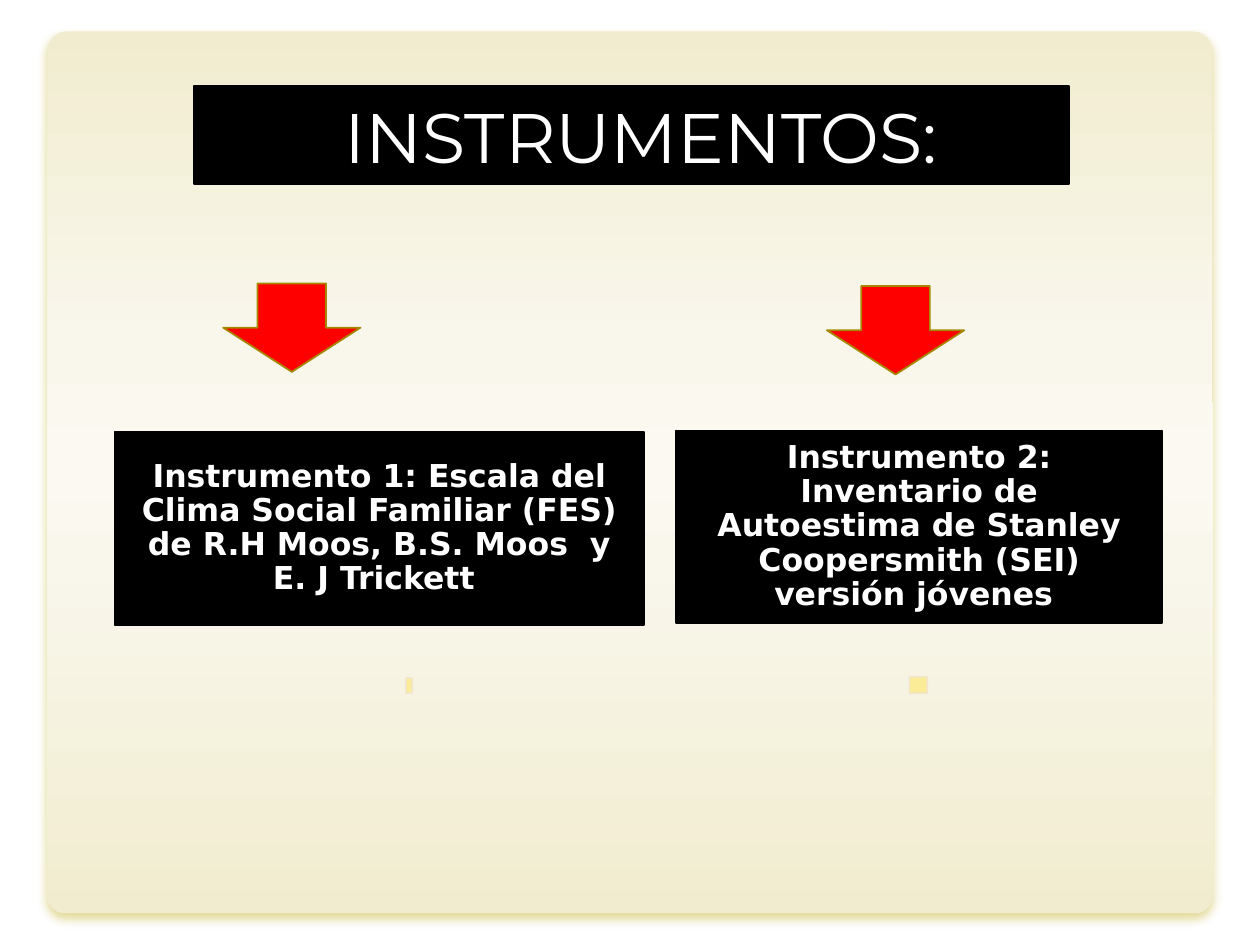
from lxml.etree import SubElement
from pptx import Presentation
from pptx.dml.color import RGBColor
from pptx.enum.shapes import MSO_SHAPE
from pptx.enum.text import MSO_ANCHOR, MSO_AUTO_SIZE, PP_ALIGN
from pptx.oxml.ns import qn
from pptx.util import Pt

COLORS = {
    "black": "000000", "white": "FFFFFF", "red": "FF0000", "gold": "A68701",
    "marker": "FCED90", "marker_line": "F3E5CC", "shadow": "C5AF25",
    "panel_edge": "F1ECCF", "panel_light": "F9F7EC", "panel_mid": "FBF9F2",
}
PANEL_STOPS = [(0, "panel_edge"), (35, "panel_light"), (50, "panel_mid"),
               (60, "panel_light"), (100, "panel_edge")]
TITLE_FONT = {"name": "Montserrat", "size": Pt(40), "bold": False}
CARD_FONT = {"name": "DejaVu Sans", "size": Pt(18), "bold": True}
ARROW_SIZE = (78.5, 50.5)
INSTRUMENTS = [
    {"card": (65.5, 247, 302.5, 110), "arrow": (127.5, 162), "marker": (232, 387.5, 3.6, 8.6),
     "text": "Instrumento 1: Escala del Clima Social Familiar (FES) "
             "de R.H Moos, B.S. Moos  y E. J Trickett "},
    {"card": (386.5, 246, 277.5, 110), "arrow": (472.5, 163.5), "marker": (519.8, 386.8, 10.1, 9.4),
     "text": "Instrumento 2: Inventario de Autoestima de Stanley "
             "Coopersmith (SEI) versión jóvenes "},
]


def rgb(name):
    return RGBColor.from_string(COLORS[name])


def set_alpha(fill_xml, percent):
    for color in fill_xml.iter(qn("a:srgbClr")):
        SubElement(color, qn("a:alpha"), val=str(percent * 1000))


def paint(sp, fill, line):
    sp.fill.solid()
    sp.fill.fore_color.rgb = rgb(fill)
    sp.line.color.rgb = rgb(line)
    sp.line.width = Pt(1)


def add_box(s, kind, box, fill, line):
    sp = s.shapes.add_shape(kind, *map(Pt, box))
    sp.shadow.inherit = False
    paint(sp, fill, line)
    return sp


def write(sp, text, font, anchor, insets, spacing):
    tf = sp.text_frame
    side, edge = map(Pt, insets)
    settings = {"word_wrap": True, "auto_size": MSO_AUTO_SIZE.NONE, "vertical_anchor": anchor,
                "margin_left": side, "margin_right": side,
                "margin_top": edge, "margin_bottom": edge}
    for key, value in settings.items():
        setattr(tf, key, value)
    p = tf.paragraphs[0]
    p.alignment = PP_ALIGN.CENTER
    p.line_spacing = spacing
    r = p.add_run()
    r.text = text
    for key, value in font.items():
        setattr(r.font, key, value)
    r.font.color.rgb = rgb("white")


def add_panel(s, box):
    sp = s.shapes.add_shape(MSO_SHAPE.ROUNDED_RECTANGLE, *map(Pt, box))
    sp.adjustments[0] = 0.022
    sp.line.fill.background()
    sp.fill.gradient()
    sp.fill.gradient_angle = 270
    stops = sp.element.spPr.find(".//" + qn("a:gsLst"))
    for stop in list(stops):
        stops.remove(stop)
    for position, name in PANEL_STOPS:
        stop = SubElement(stops, qn("a:gs"), pos=str(position * 1000))
        SubElement(stop, qn("a:srgbClr"), val=COLORS[name])
    sp.shadow.inherit = False
    effects = sp.element.spPr.find(qn("a:effectLst"))
    shadow = SubElement(effects, qn("a:outerShdw"), blurRad=str(Pt(5)), dist=str(Pt(3.6)),
                        dir="5400000", algn="ctr", rotWithShape="0")
    SubElement(shadow, qn("a:srgbClr"), val=COLORS["shadow"])
    set_alpha(shadow, 45)
    s.shapes.element.insert(2, sp.element)


def add_title(s, box):
    title = s.shapes.title
    title.left, title.top, title.width, title.height = map(Pt, box)
    paint(title, "black", "black")
    write(title, " INSTRUMENTOS:", TITLE_FONT, MSO_ANCHOR.BOTTOM, (7.2, 3.6), 1.0)


def add_instrument(s, item):
    card = add_box(s, MSO_SHAPE.RECTANGLE, item["card"], "black", "black")
    write(card, item["text"], CARD_FONT, MSO_ANCHOR.MIDDLE, (10, 5.76), 0.9)
    marker = add_box(s, MSO_SHAPE.RECTANGLE, item["marker"], "marker", "marker_line")
    set_alpha(marker.element.spPr, 90)
    add_box(s, MSO_SHAPE.DOWN_ARROW, item["arrow"] + ARROW_SIZE, "red", "gold")


def main():
    prs = Presentation()
    prs.slide_width, prs.slide_height = Pt(720), Pt(540)
    s = prs.slides.add_slide(prs.slide_layouts[5])
    add_panel(s, (27, 18, 666, 504))
    add_title(s, (111, 49, 500, 56))
    for item in INSTRUMENTS:
        add_instrument(s, item)
    prs.save("out.pptx")


if __name__ == "__main__":
    main()
